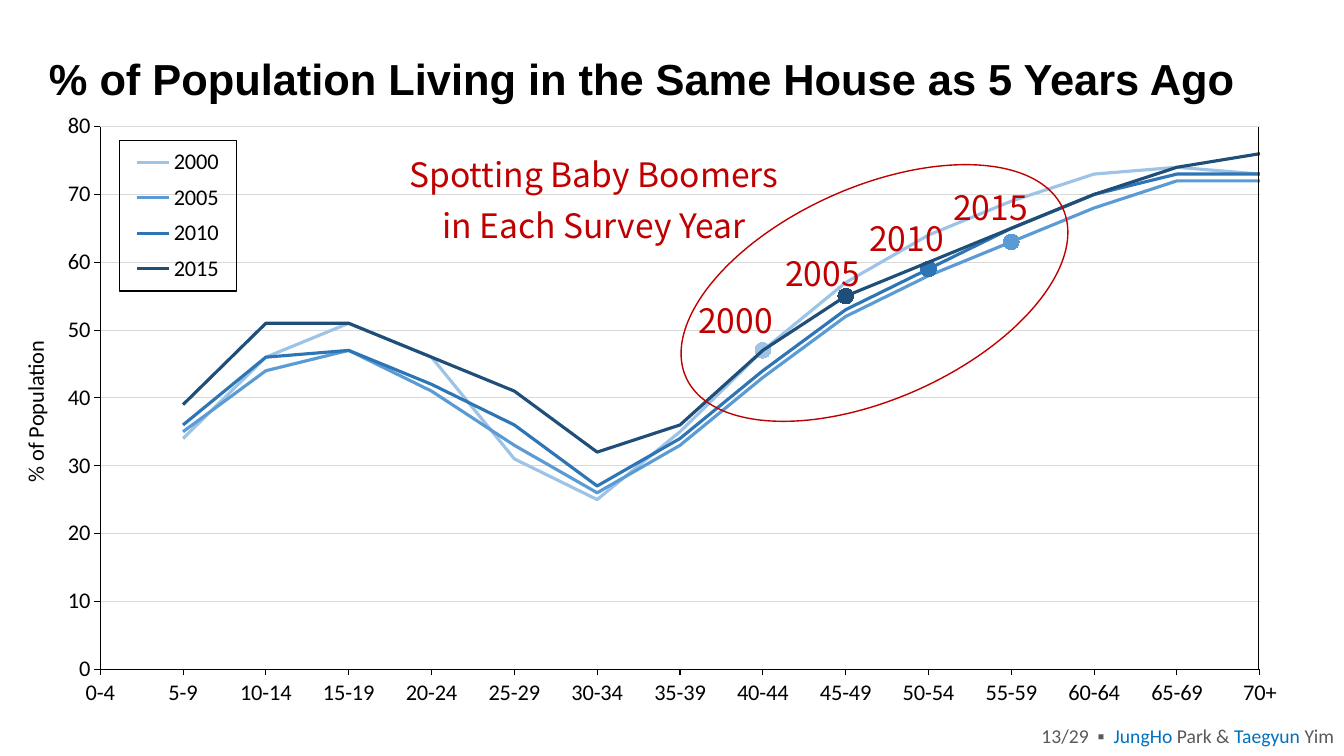
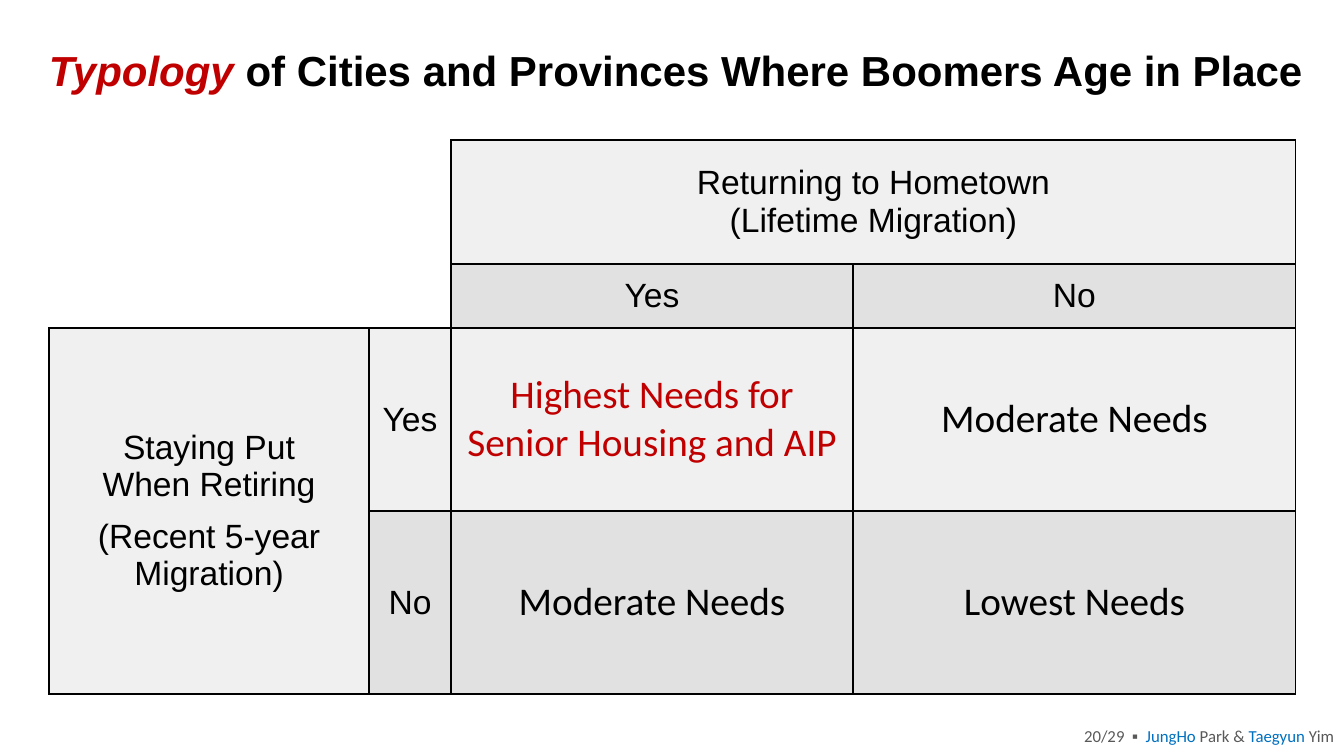
from pptx import Presentation
from pptx.chart.data import CategoryChartData
from pptx.dml.color import RGBColor
from pptx.enum.chart import XL_CHART_TYPE, XL_LEGEND_POSITION, XL_MARKER_STYLE, XL_TICK_MARK
from pptx.enum.shapes import MSO_CONNECTOR, MSO_SHAPE
from pptx.enum.text import MSO_ANCHOR, PP_ALIGN
from pptx.oxml import parse_xml
from pptx.oxml.ns import nsdecls, qn
from pptx.util import Emu, Pt

LINE = XL_CHART_TYPE.LINE
CIRCLE, NO_MARKER = XL_MARKER_STYLE.CIRCLE, XL_MARKER_STYLE.NONE
OUTSIDE = XL_TICK_MARK.OUTSIDE
LEGEND_RIGHT = XL_LEGEND_POSITION.RIGHT
STRAIGHT, OVAL = MSO_CONNECTOR.STRAIGHT, MSO_SHAPE.OVAL
TOP, MIDDLE = MSO_ANCHOR.TOP, MSO_ANCHOR.MIDDLE
LEFT, CENTER, RIGHT = PP_ALIGN.LEFT, PP_ALIGN.CENTER, PP_ALIGN.RIGHT

EMU_PER_PX = 914400 / 100.8
COLORS = {
    "black": "000000", "gray": "595959", "grid": "D9D9D9",
    "red": "C00000", "link": "0070C0",
    "light": "F0F0F0", "dark": "E1E1E1",
    "2000": "9DC3E6", "2005": "5B9BD5", "2010": "2E75B6", "2015": "1F4E79",
}
HEAD, BODY, NOTE = "Arial", "Calibri", "Noto Sans CJK KR"
TOTAL_PAGES = 29


def px(n):
    return Emu(round(n * EMU_PER_PX))


def rgb(name):
    return RGBColor.from_string(COLORS[name])


def set_font(font, size, face, color="black", bold=False):
    font.size, font.name, font.bold = Pt(size), face, bold
    font.color.rgb = rgb(color)


def set_line(line, color, width):
    line.color.rgb = rgb(color)
    line.width = Pt(width)


def set_layout(parent, target="", **fractions):
    """Place a chart part by fractions of the chart area."""
    for old in parent.findall(qn("c:layout")):
        parent.remove(old)
    inner = f'<c:layoutTarget val="{target}"/>' if target else ""
    inner += "".join(f'<c:{k}Mode val="edge"/>' for k in "xy")
    inner += "".join(f'<c:{k} val="{v}"/>' for k, v in fractions.items())
    layout = parse_xml(f'<c:layout {nsdecls("c")}><c:manualLayout>{inner}'
                       '</c:manualLayout></c:layout>')
    overlay = parent.find(qn("c:overlay"))
    if overlay is None:
        parent.insert(0, layout)
    else:
        overlay.addprevious(layout)


class Deck:
    def __init__(self):
        self.prs = Presentation()
        self.prs.slide_width, self.prs.slide_height = px(1344), px(756)
        self.s = None

    def slide(self, title, title_box, title_size, spacing, page, footer_size):
        self.s = self.prs.slides.add_slide(self.prs.slide_layouts[6])
        self.text(title_box, [title], title_size, HEAD, bold=True,
                  anchor=MIDDLE, spacing=spacing)
        footer = [(f"{page}/{TOTAL_PAGES}  ▪  ", "gray"), ("JungHo", "link"),
                  (" Park & ", "gray"), ("Taegyun ", "link"), ("Yim", "gray")]
        self.text((977, 716, 367, 40), [footer], footer_size, BODY,
                  align=RIGHT, anchor=MIDDLE)

    def fill_text(self, tf, lines, size, face, color="black", bold=False,
                  align=LEFT, spacing=None):
        """Each line is a string or a list of (text, color, italic) runs."""
        for i, line in enumerate(lines):
            p = tf.paragraphs[0] if i == 0 else tf.add_paragraph()
            p.alignment = align
            if spacing:
                p.line_spacing = spacing
            set_font(p.font, size, face, color, bold)
            for text, *style in [(line,)] if isinstance(line, str) else line:
                r = p.add_run()
                r.text = text
                if style:
                    r.font.color.rgb = rgb(style[0])
                if len(style) > 1:
                    r.font.italic = style[1]

    def text(self, box, lines, size, face, anchor=TOP, **style):
        tf = self.s.shapes.add_textbox(*map(px, box)).text_frame
        tf.word_wrap = True
        tf.vertical_anchor = anchor
        self.fill_text(tf, lines, size, face, **style)

    def note(self, box, *lines):
        self.text(box, lines, 24, NOTE, color="red", align=CENTER, spacing=1.25)

    def ellipse(self, box, rotation):
        sp = self.s.shapes.add_shape(OVAL, *map(px, box))
        sp.rotation = rotation
        sp.shadow.inherit = False
        sp.fill.background()
        set_line(sp.line, "red", 1)

    def line(self, x1, y1, x2, y2):
        cxn = self.s.shapes.add_connector(STRAIGHT, *map(px, (x1, y1, x2, y2)))
        set_line(cxn.line, "black", 0.75)
        cxn._element.spPr.append(parse_xml(f'<a:effectLst {nsdecls("a")}/>'))

    def line_chart(self, box, categories, series, highlights, axis_title):
        data = CategoryChartData(number_format="#,##0")
        data.categories = categories
        for name, values in series.items():
            data.add_series(name, values)
        chart = self.s.shapes.add_chart(LINE, *map(px, box), data).chart
        chart.has_title = False
        set_font(chart.font, 10, BODY)

        # Axes
        for axis in (chart.category_axis, chart.value_axis):
            axis.major_tick_mark = OUTSIDE
            set_line(axis.format.line, "black", 0.75)
            set_font(axis.tick_labels.font, 16, BODY)
        axis = chart.value_axis
        axis.minimum_scale, axis.maximum_scale, axis.major_unit = 0, 80, 10
        axis.tick_labels.number_format = "#,##0"
        axis.tick_labels.number_format_is_linked = False
        set_line(axis.major_gridlines.format.line, "grid", 0.75)
        tf = axis.axis_title.text_frame
        self.fill_text(tf, [axis_title], 16, BODY)

        # Series and highlighted points
        for ser in chart.plots[0].series:
            ser.smooth = False
            ser.marker.style = NO_MARKER
            set_line(ser.format.line, ser.name, 2.25)
            point = ser.points[categories.index(highlights[ser.name])]
            set_line(point.format.line, ser.name, 2.25)
            point.marker.style, point.marker.size = CIRCLE, 11
            point.marker.format.fill.solid()
            point.marker.format.fill.fore_color.rgb = rgb(ser.name)
            set_line(point.marker.format.line, ser.name, 0.75)

        # Legend with a frame
        chart.has_legend = True
        legend = chart.legend
        legend.position = LEGEND_RIGHT
        legend.include_in_layout = False
        set_font(legend.font, 16, BODY)
        legend._element.find(qn("c:overlay")).addnext(parse_xml(
            f'<c:spPr {nsdecls("c", "a")}><a:ln w="9525"><a:solidFill>'
            f'<a:srgbClr val="{COLORS["black"]}"/></a:solidFill></a:ln></c:spPr>'))

        # Lines start on the value axis
        val_ax = axis._element
        for old in val_ax.findall(qn("c:crossBetween")):
            val_ax.remove(old)
        val_ax.find(qn("c:crosses")).addnext(
            parse_xml(f'<c:crossBetween {nsdecls("c")} val="midCat"/>'))

        # Placement
        body = tf._txBody.find(qn("a:bodyPr"))
        body.set("rot", "-5400000")
        body.set("vert", "horz")
        set_layout(val_ax.getparent(), "inner", x=0.074, y=0.035, w=0.911, h=0.878)
        set_layout(axis.axis_title._element, x=0.008, y=0.375)
        set_layout(legend._element, x=0.089, y=0.057, w=0.092, h=0.244)

    def table(self, left, top, widths, heights, spans):
        box = (left, top, sum(widths), sum(heights))
        tbl = self.s.shapes.add_table(len(heights), len(widths), *map(px, box)).table
        tbl.first_row = tbl.horz_banding = False
        for col, width in zip(tbl.columns, widths):
            col.width = px(width)
        for row, height in zip(tbl.rows, heights):
            row.height = px(height)
        for (r1, c1), (r2, c2) in spans:
            tbl.cell(r1, c1).merge(tbl.cell(r2, c2))
        return tbl

    def cell(self, cell, fill, sides):
        cell.vertical_anchor = MIDDLE
        if fill:
            cell.fill.solid()
            cell.fill.fore_color.rgb = rgb(fill)
        else:
            cell.fill.background()
        tc_pr = cell._tc.get_or_add_tcPr()
        for i, side in enumerate("LRTB"):
            paint = (f'<a:solidFill><a:srgbClr val="{COLORS["black"]}"/></a:solidFill>'
                     if side in sides else "<a:noFill/>")
            tc_pr.insert(i, parse_xml(
                f'<a:ln{side} {nsdecls("a")} w="12700">{paint}</a:ln{side}>'))


def population_slide(deck):
    deck.slide("% of Population Living in the Same House as 5 Years Ago",
               (39, 51, 1241, 60), 31, 0.9, page=13, footer_size=14)
    ages = [f"{a}-{a + 4}" for a in range(0, 70, 5)] + ["70+"]
    series = {
        "2000": [None, 34, 46, 51, 46, 31, 25, 35, 47, 57, 64, 69, 73, 74, 73],
        "2005": [None, 35, 44, 47, 41, 33, 26, 33, 43, 52, 58, 63, 68, 72, 72],
        "2010": [None, 36, 46, 47, 42, 36, 27, 34, 44, 53, 59, 65, 70, 73, 73],
        "2015": [None, 39, 51, 51, 46, 41, 32, 36, 47, 55, 60, 65, 70, 74, 76],
    }
    highlights = {"2000": "40-44", "2015": "45-49", "2010": "50-54", "2005": "55-59"}
    deck.line_chart((6, 105, 1273, 618), ages, series, highlights, "% of Population")
    deck.line(1259, 127, 1259, 669)

    # Baby boomer annotations
    deck.ellipse((668, 187, 413, 212), 335.9)
    for year, x, y in zip(series, (682, 769, 853, 937), (285, 238, 203, 172)):
        deck.note((x, y, 107, 55), year)
    deck.note((377, 139, 434, 107), "Spotting Baby Boomers", "in Each Survey Year")


def typology_slide(deck):
    deck.slide([("Typology", "red", True),
                (" of Cities and Provinces Where Boomers Age in Place", "black")],
               (39, 35, 1305, 60), 30, 1.2, page=20, footer_size=12)
    tbl = deck.table(49, 140, (320, 82, 402, 443), (124, 64, 183, 183),
                     [((0, 0), (1, 1)), ((0, 2), (0, 3)), ((2, 0), (3, 0))])

    # Fills and borders: the corner is empty, even rows are light
    for r in range(4):
        for c in range(4):
            corner = r < 2 and c < 2
            light = r % 2 == 0 or c == 0
            fill = None if corner else "light" if light else "dark"
            deck.cell(tbl.cell(r, c), fill, "RB" if corner else "LRTB")

    # Headings
    headings = {
        (0, 2): ["Returning to Hometown", "(Lifetime Migration)"],
        (1, 2): ["Yes"], (1, 3): ["No"], (2, 1): ["Yes"], (3, 1): ["No"],
        (2, 0): ["Staying Put", "When Retiring", "(Recent 5-year Migration)"],
    }
    for pos, lines in headings.items():
        deck.fill_text(tbl.cell(*pos).text_frame, lines, 24, HEAD, align=CENTER)
    tbl.cell(2, 0).text_frame.paragraphs[2].space_before = Pt(10)

    # Needs
    needs = {
        (2, 2): ("Highest Needs for Senior Housing and AIP", "red"),
        (2, 3): ("Moderate Needs", "black"),
        (3, 2): ("Moderate Needs", "black"),
        (3, 3): ("Lowest Needs", "black"),
    }
    for pos, (text, color) in needs.items():
        deck.fill_text(tbl.cell(*pos).text_frame, [text], 28, BODY, color, align=CENTER)


def main():
    deck = Deck()
    population_slide(deck)
    typology_slide(deck)
    deck.prs.save("out.pptx")


if __name__ == "__main__":
    main()
